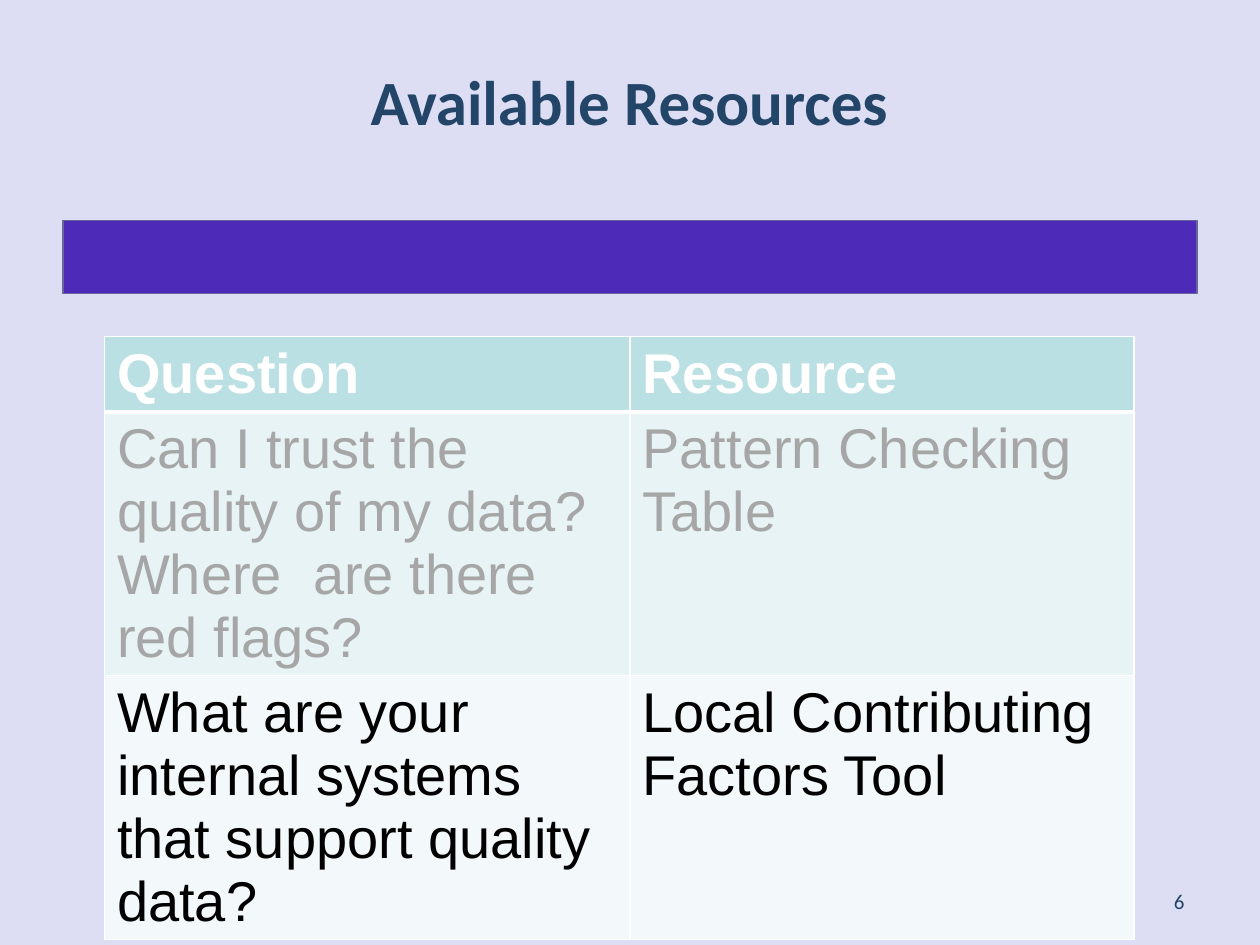
from dataclasses import dataclass
from typing import NamedTuple

from lxml.etree import SubElement
from pptx import Presentation
from pptx.dml.color import RGBColor
from pptx.enum.shapes import MSO_SHAPE
from pptx.enum.text import MSO_ANCHOR, PP_ALIGN
from pptx.oxml.ns import qn
from pptx.util import Inches, Pt


@dataclass(frozen=True)
class Theme:
    background: str = "DDDDF4"
    band: str = "4E2AB8"
    band_line: str = "666699"
    heading: str = "224568"
    grid: str = "FFFFFF"
    heading_font: str = "Calibri"
    table_font: str = "Arial"
    title_size: int = 36
    table_size: int = 32
    number_size: int = 12


class Frame(NamedTuple):
    """A place on the slide, in inches."""
    left: float
    top: float
    width: float
    height: float

    def lengths(self) -> list[int]:
        return [Inches(value) for value in self]


class ResourceRow(NamedTuple):
    question: str
    resource: str
    ink: str
    fill: str
    height: float
    bold: bool = False


THEME = Theme()
TITLE_FRAME = Frame(0.58, 0.17, 8.83, 1.25)
BAND_FRAME = Frame(0.5, 1.75, 9, 0.58)
TABLE_FRAME = Frame(0.83, 2.67, 8.17, 2.33)
NUMBER_FRAME = Frame(7.17, 6.95, 2.33, 0.4)
COLUMN_WIDTHS = (4.17, 4)
ROWS = (
    ResourceRow("Question", "Resource", "FFFFFF", "BBE0E3", 0.52, True),
    ResourceRow("Can I trust the quality of my data? Where  are there red flags?",
                "Pattern Checking Table", "A6A6A6", "E7F3F4", 0.91),
    ResourceRow("What are your internal systems  that support quality data?",
                "Local Contributing Factors Tool", "000000", "F3F9FA", 0.91),
)


def write(text_frame, text: str, color: str, align=PP_ALIGN.LEFT, **font_format) -> None:
    text_frame.text = text
    para = text_frame.paragraphs[0]
    para.alignment = align
    font = para.runs[0].font
    font.color.rgb = RGBColor.from_string(color)
    for name, value in font_format.items():
        setattr(font, name, value)


def border(cell, side: str, points: float) -> None:
    line = SubElement(cell._tc.get_or_add_tcPr(), qn(f"a:ln{side}"), w=str(Pt(points)))
    fill = SubElement(line, qn("a:solidFill"))
    SubElement(fill, qn("a:srgbClr"), val=THEME.grid)


def add_title(page) -> None:
    title = page.shapes.title
    title.left, title.top, title.width, title.height = TITLE_FRAME.lengths()
    title.text_frame.vertical_anchor = MSO_ANCHOR.MIDDLE
    write(title.text_frame, "Available Resources", THEME.heading, PP_ALIGN.CENTER,
          name=THEME.heading_font, size=Pt(THEME.title_size), bold=True)


def add_band(page) -> None:
    band = page.shapes.add_shape(MSO_SHAPE.RECTANGLE, *BAND_FRAME.lengths())
    band.shadow.inherit = False
    band.fill.solid()
    band.fill.fore_color.rgb = RGBColor.from_string(THEME.band)
    band.line.color.rgb = RGBColor.from_string(THEME.band_line)
    band.line.width = Pt(0.75)


def add_resource_table(page) -> None:
    table = page.shapes.add_table(len(ROWS), len(COLUMN_WIDTHS),
                                  *TABLE_FRAME.lengths()).table
    for column, width in zip(table.columns, COLUMN_WIDTHS):
        column.width = Inches(width)
    for index, row in enumerate(ROWS):
        table.rows[index].height = Inches(row.height)
        for cell, text in zip(table.rows[index].cells, (row.question, row.resource)):
            write(cell.text_frame, text, row.ink, name=THEME.table_font,
                  size=Pt(THEME.table_size), bold=row.bold)
            top, bottom = (3 if index == 1 else 1), (3 if index == 0 else 1)
            for side, points in zip("LRTB", (1, 1, top, bottom)):
                border(cell, side, points)
            cell.fill.solid()
            cell.fill.fore_color.rgb = RGBColor.from_string(row.fill)


def add_page_number(page) -> None:
    box = page.shapes.add_textbox(*NUMBER_FRAME.lengths())
    box.text_frame.word_wrap = True
    box.text_frame.vertical_anchor = MSO_ANCHOR.MIDDLE
    write(box.text_frame, "6", THEME.heading, PP_ALIGN.RIGHT,
          name=THEME.heading_font, size=Pt(THEME.number_size))


def main() -> None:
    deck = Presentation()
    deck.slide_width, deck.slide_height = Inches(10), Inches(7.5)
    page = deck.slides.add_slide(deck.slide_layouts.get_by_name("Title Only"))
    page.background.fill.solid()
    page.background.fill.fore_color.rgb = RGBColor.from_string(THEME.background)
    for add_part in (add_band, add_title, add_resource_table, add_page_number):
        add_part(page)
    deck.save("out.pptx")


if __name__ == "__main__":
    main()
